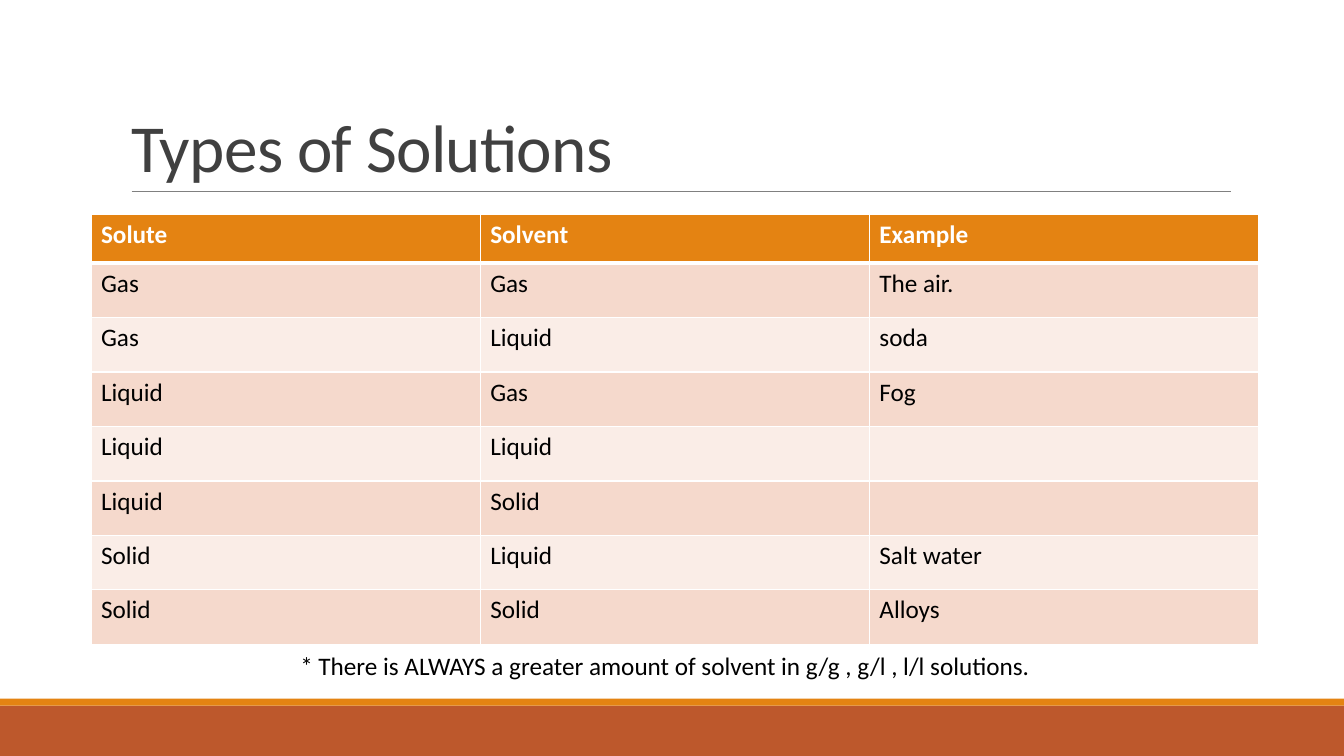
from lxml.etree import SubElement
from pptx import Presentation
from pptx.dml.color import RGBColor
from pptx.enum.shapes import MSO_CONNECTOR, MSO_SHAPE
from pptx.enum.text import MSO_ANCHOR, MSO_AUTO_SIZE, PP_ALIGN
from pptx.oxml.ns import qn
from pptx.util import Pt


def color(code):
    return RGBColor.from_string(code)


def write(para, text, code, **font_values):
    span = para.add_run()
    span.text = text
    span.font.color.rgb = color(code)
    for name, value in {"name": "Calibri", "size": Pt(18), **font_values}.items():
        setattr(span.font, name, value)
    return span


deck = Presentation()
deck.slide_width, deck.slide_height = Pt(960), Pt(540)
page = deck.slides.add_slide(deck.slide_layouts[5])

for top, height, code in [(504, 36, "BD582C"), (499, 5, "E48312")]:
    band = page.shapes.add_shape(MSO_SHAPE.RECTANGLE, 0, Pt(top), deck.slide_width, Pt(height))
    band.shadow.inherit = False
    band.fill.solid()
    band.fill.fore_color.rgb = color(code)
    band.line.fill.background()

rule = page.shapes.add_connector(MSO_CONNECTOR.STRAIGHT, Pt(94), Pt(136.8), Pt(879), Pt(136.8))
rule.line.color.rgb = color("808080")
rule.line.width = Pt(0.5)
SubElement(rule._element.spPr, qn("a:effectLst"))

title = page.shapes.title
for name, value in {"left": 86.4, "top": 22.6, "width": 792, "height": 114.2}.items():
    setattr(title, name, Pt(value))
frame_format = {
    "auto_size": MSO_AUTO_SIZE.NONE,
    "vertical_anchor": MSO_ANCHOR.BOTTOM,
    "word_wrap": True,
}
for name, value in frame_format.items():
    setattr(title.text_frame, name, value)
para = title.text_frame.paragraphs[0]
para.alignment = PP_ALIGN.LEFT
para.line_spacing = 0.85
heading = write(para, "Types of Solutions", "404040", size=Pt(48))
heading.font._element.set("spc", "-50")

solutions = [
    ("Solute", "Solvent", "Example"),
    ("Gas", "Gas", "The air."),
    ("Gas", "Liquid", "soda"),
    ("Liquid", "Gas", "Fog"),
    ("Liquid", "Liquid", ""),
    ("Liquid", "Solid", ""),
    ("Solid", "Liquid", "Salt water"),
    ("Solid", "Solid", "Alloys"),
]
header_height, row_height = 35, 38.9
table_height = header_height + row_height * (len(solutions) - 1)
table = page.shapes.add_table(
    len(solutions), 3, Pt(65), Pt(153), Pt(834), Pt(table_height)
).table

for row, texts in enumerate(solutions):
    is_header = row == 0
    table.rows[row].height = Pt(header_height if is_header else row_height)
    fill_code = "E48312" if is_header else ("FAEDE7", "F5D9CC")[row % 2]
    edges = {"lnL": 1, "lnR": 1, "lnT": 3 if row == 1 else 1, "lnB": 3 if is_header else 1}
    for column, text in enumerate(texts):
        cell = table.cell(row, column)
        properties = cell._tc.get_or_add_tcPr()
        for edge, width in edges.items():
            border = SubElement(properties, qn(f"a:{edge}"), w=str(Pt(width)))
            SubElement(SubElement(border, qn("a:solidFill")), qn("a:srgbClr"), val="FFFFFF")
        cell.fill.solid()
        cell.fill.fore_color.rgb = color(fill_code)
        if text:
            text_code = "FFFFFF" if is_header else "000000"
            write(cell.text_frame.paragraphs[0], text, text_code, bold=is_header)

box = page.shapes.add_textbox(Pt(207.4), Pt(460.8), Pt(549.4), Pt(29))
box.text_frame.word_wrap = True
box.text_frame.auto_size = MSO_AUTO_SIZE.SHAPE_TO_FIT_TEXT
footnote = "* There is ALWAYS a greater amount of solvent in g/g , g/l , l/l solutions."
write(box.text_frame.paragraphs[0], footnote, "000000")

deck.save("out.pptx")
